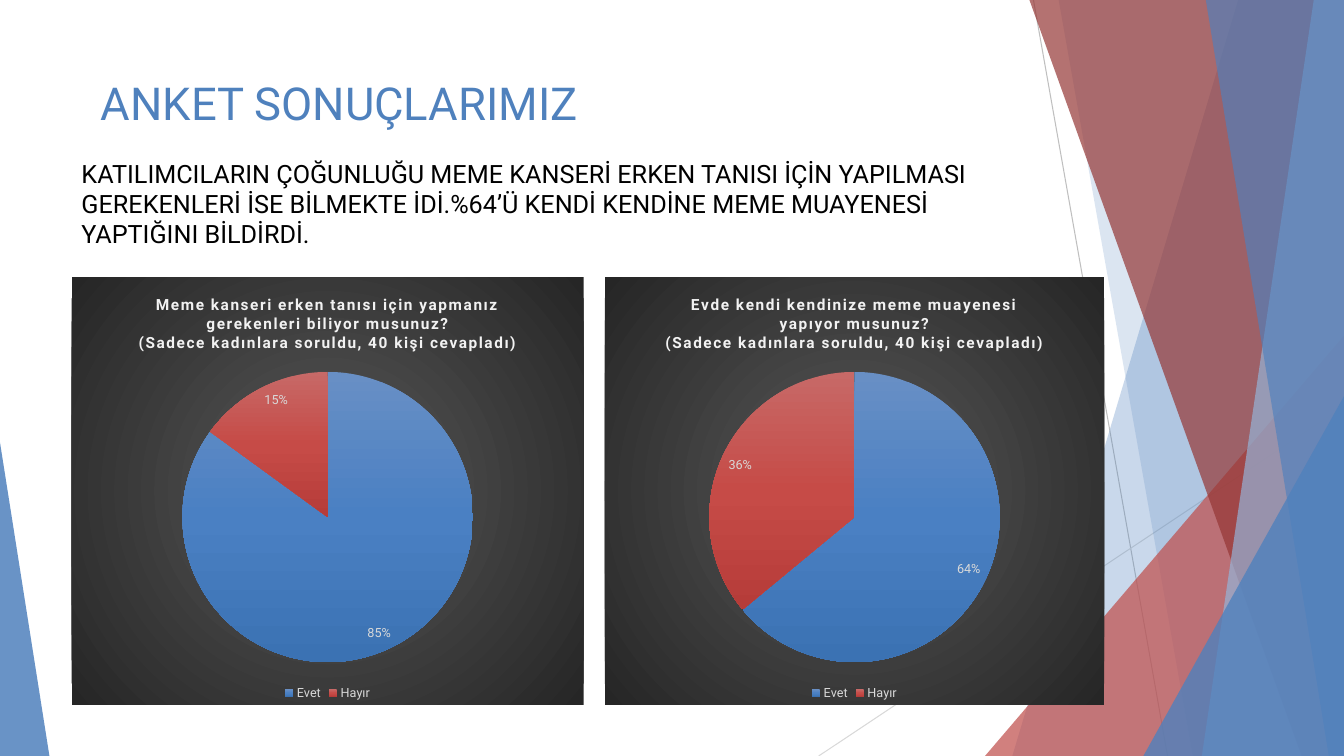
from lxml import etree
from pptx import Presentation
from pptx import util as u
from pptx.chart.data import CategoryChartData
from pptx.dml.color import RGBColor
from pptx.enum import chart as charts, shapes, text
from pptx.oxml.ns import qn

FONT = "Roboto"
WIDTH, HEIGHT = 13.33, 7.5
BLUE = RGBColor(0x4F, 0x81, 0xBD)
PALE_BLUE = RGBColor(0x95, 0xB3, 0xD7)
RED = RGBColor(0xC0, 0x50, 0x4D)
DARK_RED = RGBColor(0x95, 0x37, 0x35)
BLACK = RGBColor(0, 0, 0)
OFF_WHITE = RGBColor(0xF2, 0xF2, 0xF2)
LIGHT_GRAY = RGBColor(0xD9, 0xD9, 0xD9)
GRAY = RGBColor(0xBF, 0xBF, 0xBF)

TITLE = "ANKET SONUÇLARIMIZ"
SUMMARY = ("KATILIMCILARIN ÇOĞUNLUĞU MEME KANSERİ ERKEN TANISI İÇİN YAPILMASI "
           "GEREKENLERİ İSE BİLMEKTE İDİ.%64’Ü KENDİ KENDİNE MEME MUAYENESİ "
           "YAPTIĞINI BİLDİRDİ.")
RESPONDENTS = "(Sadece kadınlara soruldu, 40 kişi cevapladı)"
ANSWERS = ("Evet", "Hayır")
# Left, width, question, share of each answer
SURVEYS = [
    (0.71, 5.08, "Meme kanseri erken tanısı için yapmanız gerekenleri biliyor musunuz?", (85, 15)),
    (6, 4.95, "Evde kendi kendinize meme muayenesi yapıyor musunuz?", (64, 36)),
]
CHART_TOP, CHART_HEIGHT = 2.75, 4.24
PIE_TOP, PIE_SIZE = 0.94, 2.88

PANEL_STOPS = [(0, "595959"), (100, "262626")]
SLICE_STOPS = [
    [(0, "688FC5"), (50, "4A80C3"), (100, "3B72B3")],
    [(0, "C76967"), (50, "C64B47"), (100, "B63C39")],
]

# Start, end, colour
RAYS = [((10.25, 0), (11.58, HEIGHT), GRAY),
        ((WIDTH, 4.03), (8.12, HEIGHT), LIGHT_GRAY)]
# Bands reach the right edge: top-left x, bottom-left x, colour, opacity
# Corners: left, top, width, apex position, colour, opacity
DECOR = [
    ("band", 12.28, 10.04, BLUE, 30),
    ("band", 10.5, 11.83, BLUE, 20),
    ("corner", 9.77, 3.33, 3.56, 1, RED, 72),
    ("band", 10.21, 12.91, DARK_RED, 70),
    ("band", 13.03, 11.92, PALE_BLUE, 70),
    ("band", 11.96, 13.18, BLUE, 65),
    ("corner", 11.34, 3.93, 1.99, 1, BLUE, 80),
    ("corner", 0, 4.39, 0.49, 0, BLUE, 85),
]


def inches(*lengths):
    return [u.Inches(length) for length in lengths]


def write_text(frame, content, size, color, bold=False, align=None, spacing=0):
    """Fill a text frame, one paragraph per line; spacing is in points."""
    frame.text = content
    for paragraph in frame.paragraphs:
        if align is not None:
            paragraph.alignment = align
        for run in paragraph.runs:
            set_font(run.font, size, color, bold)
            if spacing:
                run.font._element.set("spc", str(spacing * 100))


def set_font(font, size, color, bold=False):
    font.name, font.size, font.bold = FONT, u.Pt(size), bold
    font.color.rgb = color


def add_text(slide, box, content, anchor=text.MSO_ANCHOR.TOP, **style):
    frame = slide.shapes.add_textbox(*inches(*box)).text_frame
    frame.word_wrap = True
    frame.vertical_anchor = anchor
    write_text(frame, content, **style)


def add_ray(slide, start, end, color):
    ray = slide.shapes.add_connector(shapes.MSO_CONNECTOR.STRAIGHT, *inches(*start, *end))
    ray.line.color.rgb = color
    ray.line.width = u.Pt(0.75)
    etree.SubElement(ray._element.spPr, qn("a:effectLst"))


def paint(shape, color, opacity):
    shape.shadow.inherit = False
    shape.fill.solid()
    shape.fill.fore_color.rgb = color
    shape.line.fill.background()
    color_node = shape._element.spPr.find(".//" + qn("a:srgbClr"))
    etree.SubElement(color_node, qn("a:alpha"), val=str(opacity * 1000))


def add_band(slide, top_x, bottom_x, color, opacity):
    builder = slide.shapes.build_freeform(*inches(top_x, 0), scale=1.0)
    outline = [(WIDTH, 0), (WIDTH, HEIGHT), (bottom_x, HEIGHT)]
    builder.add_line_segments([inches(*point) for point in outline], close=True)
    paint(builder.convert_to_shape(), color, opacity)


def add_corner(slide, left, top, width, apex, color, opacity):
    corner = slide.shapes.add_shape(shapes.MSO_SHAPE.ISOSCELES_TRIANGLE,
                                    *inches(left, top, width, HEIGHT - top))
    corner.adjustments[0] = apex
    paint(corner, color, opacity)


def gradient(stops, radial=False):
    fill = etree.Element(qn("a:gradFill"))
    stop_list = etree.SubElement(fill, qn("a:gsLst"))
    for position, color in stops:
        stop = etree.SubElement(stop_list, qn("a:gs"), pos=str(position * 1000))
        etree.SubElement(stop, qn("a:srgbClr"), val=color)
    if radial:
        shade = etree.SubElement(fill, qn("a:path"), path="circle")
        etree.SubElement(shade, qn("a:fillToRect"),
                         {side: "50000" for side in "ltrb"})
    else:
        etree.SubElement(fill, qn("a:lin"), ang="5400000", scaled="0")
    return fill


def fill_panel(chart):
    """Give the whole chart area a borderless radial gradient."""
    properties = etree.Element(qn("c:spPr"))
    properties.append(gradient(PANEL_STOPS, radial=True))
    line = etree.SubElement(properties, qn("a:ln"))
    etree.SubElement(line, qn("a:noFill"))
    chart.element.find(qn("c:chart")).addnext(properties)


def place_pie(chart, width):
    """Centre the pie across the chart at a fixed size."""
    plot_area = chart.element.find(".//" + qn("c:plotArea"))
    for old in plot_area.findall(qn("c:layout")):
        plot_area.remove(old)
    layout = etree.Element(qn("c:layout"))
    manual = etree.SubElement(layout, qn("c:manualLayout"))
    settings = {"layoutTarget": "inner", "xMode": "edge", "yMode": "edge",
                "x": (width - PIE_SIZE) / 2 / width, "y": PIE_TOP / CHART_HEIGHT,
                "w": PIE_SIZE / width, "h": PIE_SIZE / CHART_HEIGHT}
    for name, value in settings.items():
        etree.SubElement(manual, qn("c:" + name), val=str(value))
    plot_area.insert(0, layout)


def add_survey(slide, left, width, question, shares):
    data = CategoryChartData()
    data.categories = ANSWERS
    data.add_series("Series 1", shares)
    chart = slide.shapes.add_chart(charts.XL_CHART_TYPE.PIE,
                                   *inches(left, CHART_TOP, width, CHART_HEIGHT), data).chart
    set_font(chart.font, 10, BLACK)
    write_text(chart.chart_title.text_frame, f"{question}\n{RESPONDENTS}", size=11,
               color=OFF_WHITE, bold=True, align=text.PP_ALIGN.CENTER, spacing=1)
    chart.has_legend = True
    chart.legend.position = charts.XL_LEGEND_POSITION.BOTTOM
    chart.legend.include_in_layout = False
    set_font(chart.legend.font, 9, LIGHT_GRAY)

    plot = chart.plots[0]
    plot.vary_by_categories = True
    plot.has_data_labels = True
    labels = plot.data_labels
    labels.show_percentage, labels.show_value = True, False
    labels.number_format, labels.number_format_is_linked = "0%", False
    labels.position = charts.XL_LABEL_POSITION.INSIDE_END
    set_font(labels.font, 9, LIGHT_GRAY)

    for index in range(len(ANSWERS)):
        plot.series[0].points[index].format.fill.background()
    slices = chart.element.xpath(".//c:dPt/c:spPr")
    for properties, stops in zip(slices, SLICE_STOPS):
        properties.replace(properties.find(qn("a:noFill")), gradient(stops))
    fill_panel(chart)
    place_pie(chart, width)


def main():
    presentation = Presentation()
    presentation.slide_width, presentation.slide_height = inches(WIDTH, HEIGHT)
    slide = presentation.slides.add_slide(presentation.slide_layouts[6])
    for ray in RAYS:
        add_ray(slide, *ray)
    draw = {"band": add_band, "corner": add_corner}
    for kind, *details in DECOR:
        draw[kind](slide, *details)
    add_text(slide, (0.9, 0.67, 9.24, 0.69), TITLE, text.MSO_ANCHOR.MIDDLE,
             size=32.4, color=BLUE)
    for survey in SURVEYS:
        add_survey(slide, *survey)
    add_text(slide, (0.71, 1.52, 9.44, 1.01), SUMMARY, size=18, color=BLACK)
    presentation.save("out.pptx")


if __name__ == "__main__":
    main()
